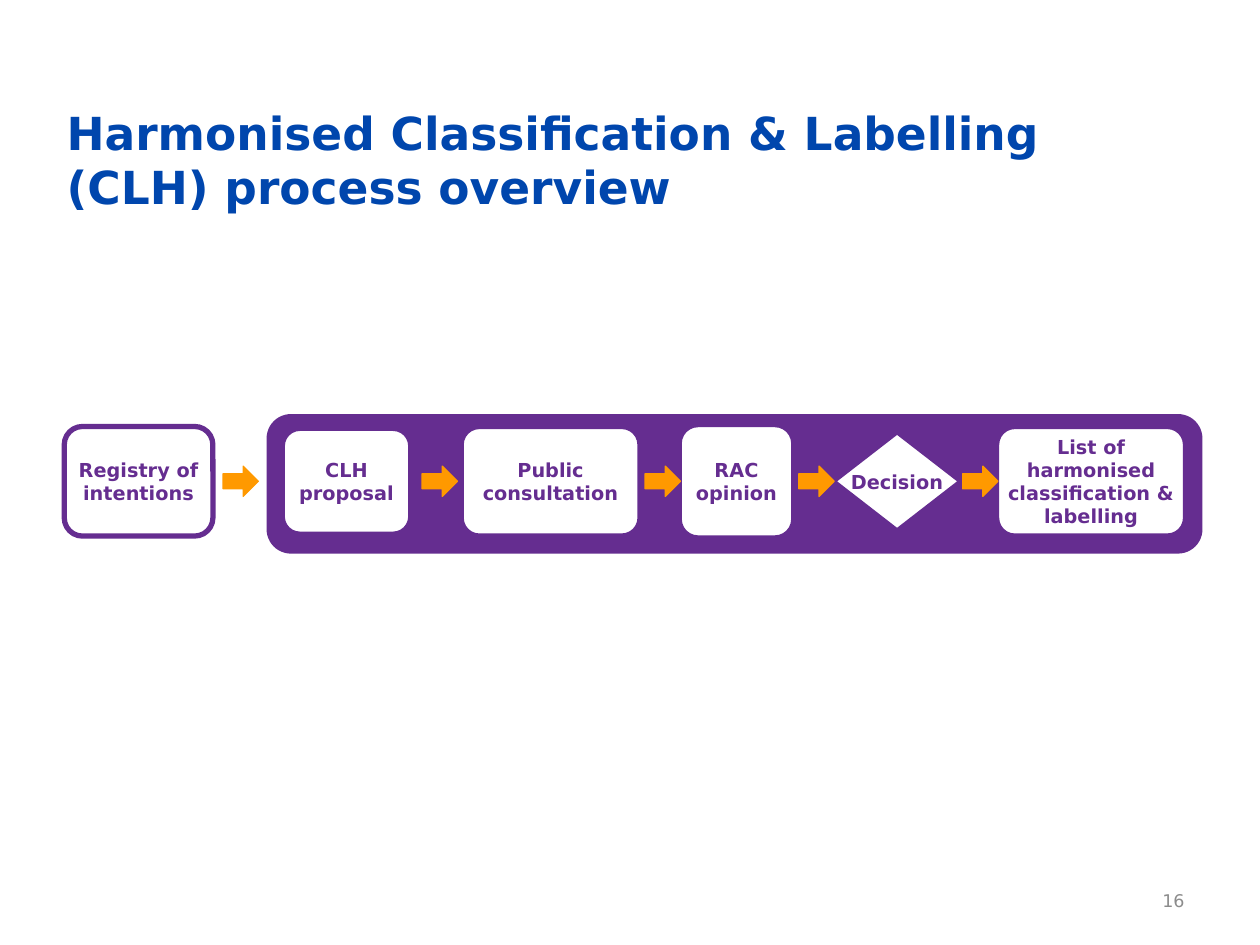
"""Build the CLH process overview slide."""
from pptx import Presentation
from pptx.dml.color import RGBColor
from pptx.enum.shapes import MSO_SHAPE
from pptx.enum.text import MSO_ANCHOR, PP_ALIGN
from pptx.util import Inches, Pt

ALT = MSO_SHAPE.FLOWCHART_ALTERNATE_PROCESS
ROUND = MSO_SHAPE.ROUNDED_RECTANGLE
DIAMOND = MSO_SHAPE.DIAMOND
ARROW = MSO_SHAPE.RIGHT_ARROW
MIDDLE = MSO_ANCHOR.MIDDLE
LEFT, CENTER, RIGHT = PP_ALIGN.LEFT, PP_ALIGN.CENTER, PP_ALIGN.RIGHT
BLUE = RGBColor(0x00, 0x46, 0xAD)
GREY = RGBColor(0x8C, 0x8C, 0x8C)
PURPLE = RGBColor(0x65, 0x2D, 0x90)
ORANGE = RGBColor(0xFF, 0x99, 0x00)
WHITE = RGBColor(0xFF, 0xFF, 0xFF)

prs = Presentation()
prs.slide_width, prs.slide_height = Inches(10), Inches(7.5)
COL, ROW = prs.slide_width / 100, prs.slide_height / 75
MID_ROW = 38.2
s = prs.slides.add_slide(prs.slide_layouts[6])


def add_shape(kind, x, y, w, h, fill, line, weight):
    sp = s.shapes.add_shape(kind, int(x * COL), int(y * ROW), int(w * COL), int(h * ROW))
    sp.shadow.inherit = False
    sp.fill.solid()
    sp.fill.fore_color.rgb = fill
    sp.line.color.rgb = line
    sp.line.width = Pt(weight)
    return sp


def write(sp, lines, align, color, font, frame):
    tf = sp.text_frame
    for name, value in frame.items():
        setattr(tf, name, value)
    for i, line in enumerate(lines):
        p = tf.add_paragraph() if i else tf.paragraphs[0]
        p.alignment = align
        r = p.add_run()
        r.text = line
        r.font.color.rgb = color
        for name, value in font.items():
            setattr(r.font, name, value)


FACE = {"name": "DejaVu Sans"}
BODY = {"vertical_anchor": MIDDLE, "word_wrap": True}
SNUG = dict.fromkeys(("margin_left", "margin_right", "margin_top", "margin_bottom"), 0)

for x, y, w, h, text, align, color, font in (
    (4.3, 4.4, 90.5, 16.5, "Harmonised Classification & Labelling (CLH) process overview",
     LEFT, BLUE, {"size": Pt(26), "bold": True}),
    (71.7, 69.5, 23.3, 4, "16", RIGHT, GREY, {"size": Pt(10), "bold": False}),
):
    sp = s.shapes.add_textbox(int(x * COL), int(y * ROW), int(w * COL), int(h * ROW))
    write(sp, [text], align, color, FACE | font, BODY)

add_shape(ALT, 21.3, 33, 74, 10.8, PURPLE, PURPLE, 2)

STEPS = (
    (ROUND, 5.1, 11.8, 8.7, ["Registry of intentions"]),
    (ROUND, 22.4, 10.2, 8.4, ["CLH", "proposal"]),
    (ALT, 36.6, 14.2, 8.7, ["Public", "consultation"]),
    (ALT, 53.9, 9.1, 9, ["RAC", "opinion"]),
    (DIAMOND, 66.1, 10.2, 7.9, ["Decision"]),
    (ROUND, 79.1, 15, 8.7, ["List of harmonised classification & labelling"]),
)
for kind, x, w, h, lines in STEPS:
    sp = add_shape(kind, x, MID_ROW - h / 2, w, h, WHITE, PURPLE, 3)
    wrap = {"word_wrap": kind != DIAMOND}
    write(sp, lines, CENTER, PURPLE, FACE | {"size": Pt(11), "bold": True}, BODY | SNUG | wrap)

for x in (17.7, 33.5, 51.2, 63.4, 76.4):
    add_shape(ARROW, x, MID_ROW - 1.2, 2.8, 2.4, ORANGE, ORANGE, 0.75)

prs.save("out.pptx")
